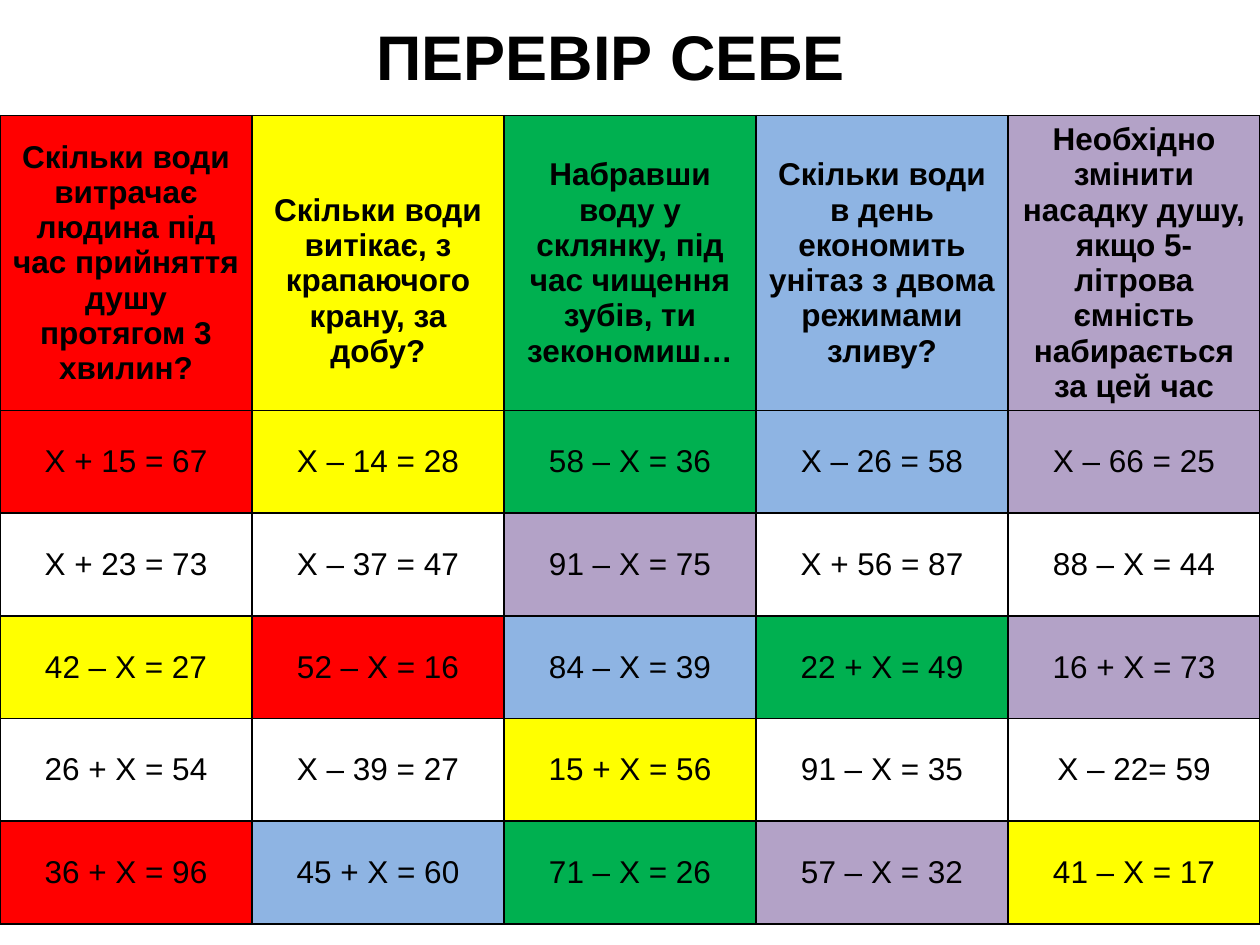
from lxml import etree
from pptx import Presentation
from pptx import util as u
from pptx.dml.color import RGBColor
from pptx.enum import text
from pptx.oxml.ns import qn

# Content: one letter per cell names its colour
TITLE = "ПЕРЕВІР СЕБЕ"
QUESTIONS = [
    "Скільки води витрачає людина під час прийняття душу протягом 3 хвилин?",
    "Скільки води витікає, з крапаючого крану, за добу?",
    "Набравши воду у склянку, під час чищення зубів, ти зекономиш…",
    "Скільки води в день економить унітаз з двома режимами зливу?",
    "Необхідно змінити насадку душу, якщо 5-літрова ємність набирається за цей час",
]
EQUATIONS = [
    ["Х + 15 = 67", "Х – 14 = 28", "58 – Х = 36", "Х – 26 = 58", "Х – 66 = 25"],
    ["Х + 23 = 73", "Х – 37 = 47", "91 – Х = 75", "Х + 56 = 87", "88 – Х = 44"],
    ["42 – Х = 27", "52 – Х = 16", "84 – Х = 39", "22 + Х = 49", "16 + Х = 73"],
    ["26 + Х = 54", "Х – 39 = 27", "15 + Х = 56", "91 – Х = 35", "Х – 22= 59"],
    ["36 + Х = 96", "45 + Х = 60", "71 – Х = 26", "57 – Х = 32", "41 – Х = 17"],
]
COLOUR_MAP = ["RYGBV", "RYGBV", "WWVWW", "YRBGV", "WWYWW", "RBGVY"]

THEME = {
    "font": "Arial", "ink": "000000", "title": u.Pt(36), "body": u.Pt(18), "border": u.Pt(1),
    "fills": {"R": "FF0000", "Y": "FFFF00", "G": "00B050",
              "B": "8EB4E3", "V": "B3A2C7", "W": "FFFFFF"},
}

# Layout
SLIDE_W, SLIDE_H = u.Cm(25.4), u.Cm(19.05)
TABLE_TOP = u.Cm(2.33)
QUESTION_H, EQUATION_H = u.Cm(5.94), u.Cm(2.07)
LOWERED_QUESTION, LOWERED_MARGIN = 1, u.Cm(0.85)


def style(paragraph, size, bold, align):
    paragraph.alignment = align
    for run in paragraph.runs:
        run.font.name, run.font.size, run.font.bold = THEME["font"], size, bold
        run.font.color.rgb = RGBColor.from_string(THEME["ink"])


def add_borders(cell):
    properties = cell._tc.get_or_add_tcPr()
    for side in ("lnL", "lnR", "lnT", "lnB"):
        line = etree.SubElement(properties, qn(f"a:{side}"), w=str(THEME["border"]))
        fill = etree.SubElement(line, qn("a:solidFill"))
        etree.SubElement(fill, qn("a:srgbClr"), val=THEME["ink"])


def add_title(slide):
    title = slide.shapes.title
    title.left, title.top, title.width, title.height = map(u.Cm, (7.34, 0.23, 14.2, 1.8))
    frame = title.text_frame
    frame.text = TITLE
    frame.auto_size = text.MSO_AUTO_SIZE.NONE
    frame.vertical_anchor = text.MSO_ANCHOR.TOP
    style(frame.paragraphs[0], THEME["title"], True, text.PP_ALIGN.LEFT)


def add_puzzle(slide):
    rows = [QUESTIONS] + EQUATIONS
    heights = [QUESTION_H] + [EQUATION_H] * len(EQUATIONS)
    puzzle = slide.shapes.add_table(len(rows), len(QUESTIONS), 0, TABLE_TOP,
                                    SLIDE_W, sum(heights)).table
    for r, (entries, colours) in enumerate(zip(rows, COLOUR_MAP)):
        puzzle.rows[r].height = heights[r]
        for c, (entry, colour) in enumerate(zip(entries, colours)):
            cell = puzzle.cell(r, c)
            cell.text_frame.text = entry
            cell.vertical_anchor = text.MSO_ANCHOR.MIDDLE
            style(cell.text_frame.paragraphs[0], THEME["body"], r == 0, text.PP_ALIGN.CENTER)
            add_borders(cell)
            cell.fill.solid()
            cell.fill.fore_color.rgb = RGBColor.from_string(THEME["fills"][colour])
    puzzle.cell(0, LOWERED_QUESTION).margin_top = LOWERED_MARGIN


def main():
    deck = Presentation()
    deck.slide_width, deck.slide_height = SLIDE_W, SLIDE_H
    slide = deck.slides.add_slide(deck.slide_layouts[5])  # Title Only
    add_title(slide)
    add_puzzle(slide)
    deck.save("out.pptx")


if __name__ == "__main__":
    main()
